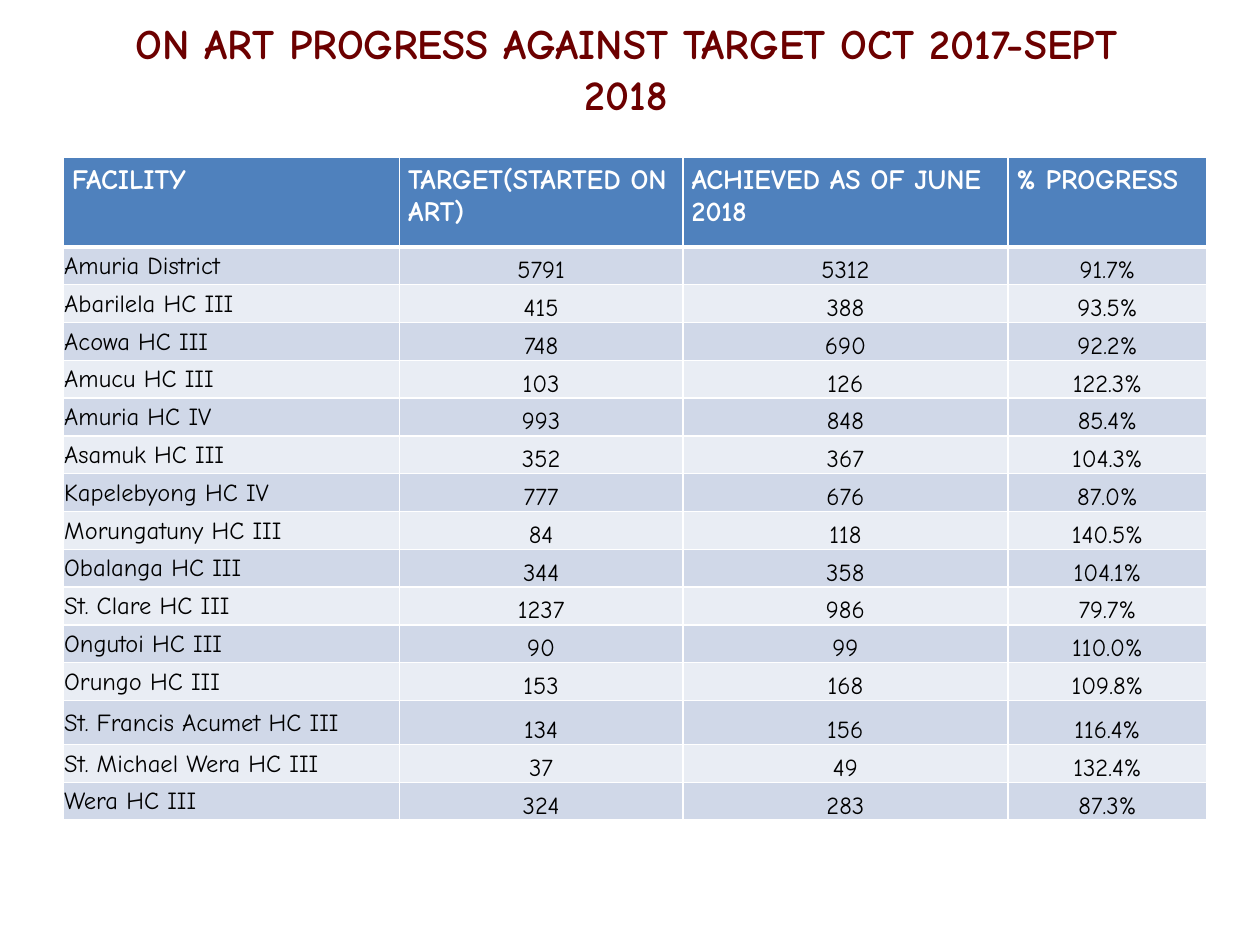
from lxml.etree import SubElement
from pptx import Presentation
from pptx.dml.color import RGBColor
from pptx.enum.text import MSO_ANCHOR as Anchor, PP_ALIGN as Align
from pptx.oxml.ns import qn
from pptx.util import Inches, Pt

FONT = "Comic Neue"
WHITE = RGBColor(0xFF, 0xFF, 0xFF)
BLACK = RGBColor(0, 0, 0)
MAROON = RGBColor(0x6C, 0, 0)
HEADER_BLUE = RGBColor(0x4F, 0x81, 0xBD)
BAND_DARK = RGBColor(0xD0, 0xD8, 0xE8)
BAND_LIGHT = RGBColor(0xE9, 0xED, 0xF4)

HEADERS = ["FACILITY", "TARGET(STARTED ON ART)", "ACHIEVED AS OF JUNE 2018", "% PROGRESS"]
FACILITIES = [
    ("Amuria District", 5791, 5312),
    ("Abarilela HC III", 415, 388),
    ("Acowa HC III", 748, 690),
    ("Amucu HC III", 103, 126),
    ("Amuria HC IV", 993, 848),
    ("Asamuk HC III", 352, 367),
    ("Kapelebyong HC IV", 777, 676),
    ("Morungatuny HC III", 84, 118),
    ("Obalanga HC III", 344, 358),
    ("St. Clare HC III", 1237, 986),
    ("Ongutoi HC III", 90, 99),
    ("Orungo HC III", 153, 168),
    ("St. Francis Acumet HC III", 134, 156),
    ("St. Michael Wera HC III", 37, 49),
    ("Wera HC III", 324, 283),
]
COLUMN_WIDTHS = [2.67, 2.25, 2.58, 1.58]
HEADER_HEIGHT, ROW_HEIGHT, TALL_ROW_HEIGHT = 0.71, 0.3, 0.35
TALL_ROW = 13


def style_text(para, size, color, bold, align):
    para.alignment = align
    para.font.name = FONT
    para.font.size = Pt(size)
    para.font.bold = bold
    para.font.color.rgb = color


def add_borders(cell, top, bottom):
    """Draw white cell borders, with top and bottom widths in points; call before filling."""
    properties = cell._tc.get_or_add_tcPr()
    for side, width in (("L", 1), ("R", 1), ("T", top), ("B", bottom)):
        line = SubElement(properties, qn(f"a:ln{side}"), w=str(Pt(width)))
        fill = SubElement(line, qn("a:solidFill"))
        SubElement(fill, qn("a:srgbClr"), val=str(WHITE))


deck = Presentation()
deck.slide_width, deck.slide_height = Inches(10), Inches(7.5)
page = deck.slides.add_slide(deck.slide_layouts[6])
page.background.fill.solid()
page.background.fill.fore_color.rgb = WHITE

title = page.shapes.add_textbox(Inches(0.66), Inches(0), Inches(8.62), Inches(1.08)).text_frame
title.word_wrap = True
title.vertical_anchor = Anchor.MIDDLE
title.text = "ON ART PROGRESS AGAINST TARGET OCT 2017-SEPT 2018"
style_text(title.paragraphs[0], 24, MAROON, True, Align.CENTER)

rows = [HEADERS]
for facility, target, achieved in FACILITIES:
    rows.append([facility, str(target), str(achieved), f"{achieved / target:.1%}"])

table = page.shapes.add_table(
    len(rows), len(HEADERS), Inches(0.5), Inches(1.25), Inches(9.08), Inches(5.27)
).table
for column, width in zip(table.columns, COLUMN_WIDTHS):
    column.width = Inches(width)
for row in table.rows:
    row.height = Inches(ROW_HEIGHT)
table.rows[0].height = Inches(HEADER_HEIGHT)
table.rows[TALL_ROW].height = Inches(TALL_ROW_HEIGHT)

for row_index, values in enumerate(rows):
    is_header = row_index == 0
    for column_index, value in enumerate(values):
        cell = table.cell(row_index, column_index)
        cell.text = value
        para = cell.text_frame.paragraphs[0]
        add_borders(cell, 3 if row_index == 1 else 1, 3 if is_header else 1)
        cell.fill.solid()
        if is_header:
            cell.fill.fore_color.rgb = HEADER_BLUE
            cell.margin_left = cell.margin_right = Inches(0.07)
            cell.margin_top = cell.margin_bottom = Inches(0.05)
            style_text(para, 16, WHITE, True, Align.LEFT)
        else:
            is_name = column_index == 0
            cell.fill.fore_color.rgb = BAND_DARK if row_index % 2 else BAND_LIGHT
            cell.margin_left = cell.margin_right = cell.margin_top = Inches(0.01)
            cell.margin_bottom = Inches(0)
            cell.vertical_anchor = Anchor.MIDDLE if is_name else Anchor.BOTTOM
            style_text(para, 14, BLACK, False, Align.LEFT if is_name else Align.CENTER)

deck.save("out.pptx")
